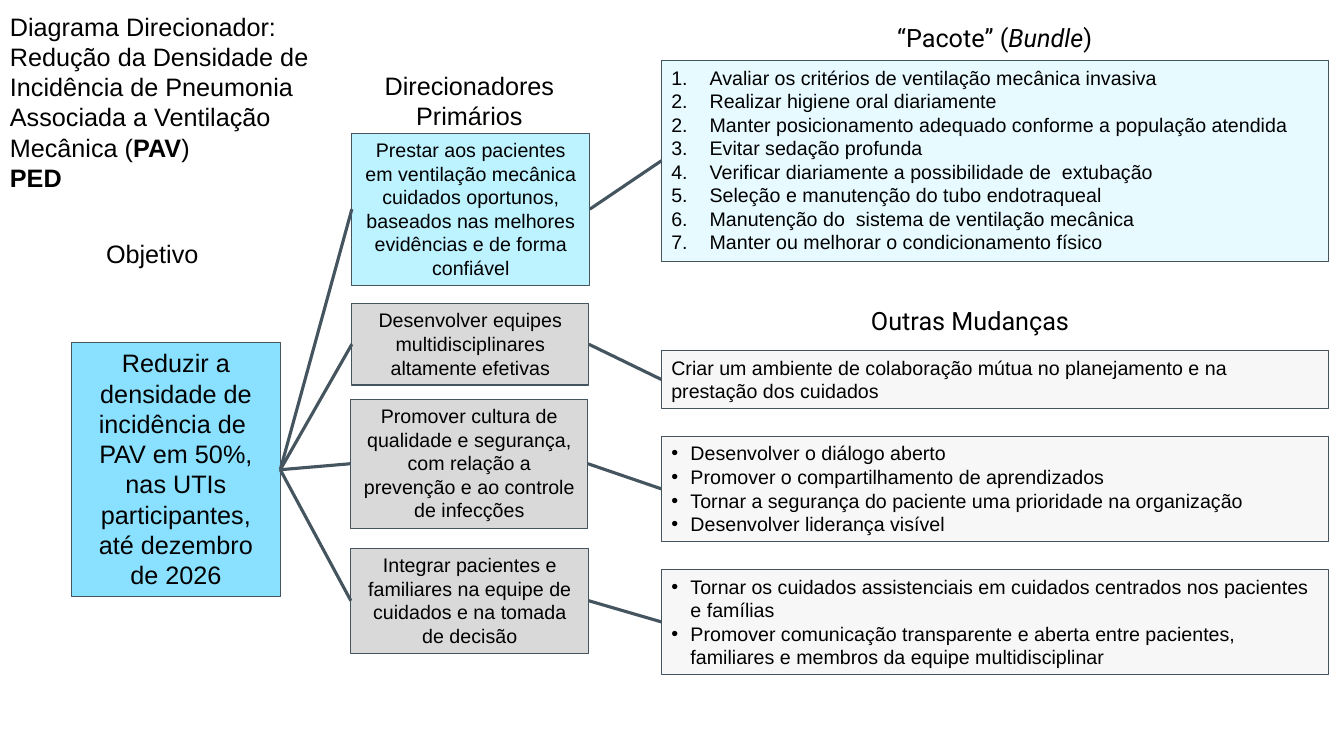
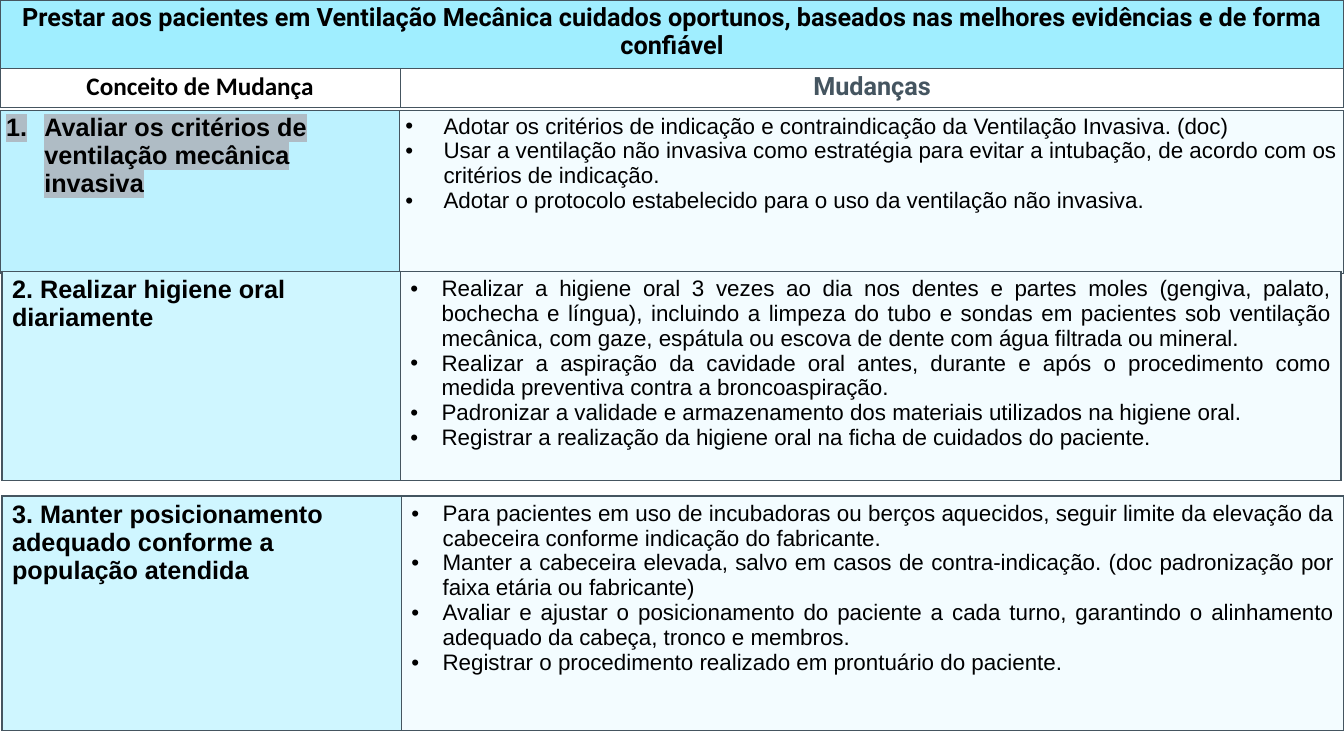
from lxml import etree
from pptx import Presentation
from pptx import util as u
from pptx.dml.color import RGBColor
from pptx.enum import shapes, text
from pptx.oxml import ns

HUES = {
    "ink": "000000", "line": "455560", "white": "FFFFFF", "goal": "89E0FF",
    "main": "BDF2FF", "pack": "E7FAFF", "gray": "D9D9D9", "pale": "F7F7F7",
    "head": "A0EEFF", "idea": "CFF6FF", "cell": "F3FCFF", "mark": "AFBCC5",
}
ALIGN = {"l": text.PP_ALIGN.LEFT, "c": text.PP_ALIGN.CENTER, "j": text.PP_ALIGN.JUSTIFY}

# Slide 1: text, box (left, top, width, height), format
LABELS = [
    (["Diagrama Direcionador:",
      [("Redução da Densidade de Incidência de Pneumonia Associada a Ventilação Mecânica (", {}),
       ("PAV", {"bold": True}), (")", {})],
      [("PED", {"bold": True})]], (0, 0.06, 3.49, 1.92), {}),
    (["Objetivo"], (0.57, 2.32, 1.88, 0.4), {"align": "c"}),
    (["Direcionadores Primários"], (3.4, 0.65, 2.51, 0.71), {"align": "c"}),
    ([[("“Pacote” (", {}), ("Bundle", {"italic": True}), (")", {})]],
     (7.84, 0.17, 4.05, 0.4), {"align": "c", "font": "Roboto"}),
    (["Outras Mudanças"], (8.54, 2.98, 2.35, 0.4), {"font": "Roboto"}),
]
GOAL = ("Reduzir a densidade de incidência de  PAV em 50%, nas UTIs participantes, "
        "até dezembro de 2026")
PACK = [
    "Avaliar os critérios de ventilação mecânica invasiva",
    "Realizar higiene oral diariamente",
    "Manter posicionamento adequado conforme a população atendida",
    "Evitar sedação profunda",
    "Verificar diariamente a possibilidade de  extubação",
    "Seleção e manutenção do tubo endotraqueal",
    "Manutenção do  sistema de ventilação mecânica",
    "Manter ou melhorar o condicionamento físico",
]
STARTS = [1, 1, 2, 3, 3, 5, 5, 5]
# Each driver with its changes: text, box, fill; then texts, (top, height), fill, format
DRIVERS = [
    ("Prestar aos pacientes em ventilação mecânica cuidados oportunos, baseados nas "
     "melhores evidências e de forma confiável", (3.49, 1.32, 2.36, 1.51), "main",
     PACK, (0.6, 1.99), "pack", {"starts": STARTS, "indent": 0.38}),
    ("Desenvolver equipes multidisciplinares altamente efetivas",
     (3.49, 3.01, 2.35, 0.81), "gray",
     ["Criar um ambiente de colaboração mútua no planejamento e na prestação dos cuidados"],
     (3.48, 0.57), "pale", {}),
    ("Promover cultura de qualidade e segurança, com relação a prevenção e ao controle "
     "de infecções", (3.48, 3.96, 2.35, 1.28), "gray",
     ["Desenvolver o diálogo aberto",
      "Promover o compartilhamento de aprendizados",
      "Tornar a segurança do paciente uma prioridade na organização",
      "Desenvolver liderança visível"],
     (4.33, 1.04), "pale", {"indent": 0.19}),
    ("Integrar pacientes e familiares na equipe de cuidados e na tomada de decisão",
     (3.48, 5.44, 2.36, 1.04), "gray",
     ["Tornar os cuidados assistenciais em cuidados centrados nos pacientes e famílias",
      "Promover comunicação transparente e aberta entre pacientes, familiares e membros "
      "da equipe multidisciplinar"],
     (5.65, 1.04), "pale", {"indent": 0.19}),
]

# Slide 2
TITLE = ("Prestar aos pacientes em Ventilação Mecânica cuidados oportunos, baseados nas "
         "melhores evidências e de forma confiável")
# Idea, its changes, (left, top), column widths, height, line width, fill, formats
ROWS = [
    ("Avaliar os critérios de ventilação mecânica invasiva",
     ["Adotar os critérios de indicação e contraindicação da Ventilação Invasiva. (doc)",
      "Usar a ventilação não invasiva como estratégia para evitar a intubação, de acordo "
      "com os critérios de indicação.",
      "Adotar o protocolo estabelecido para o uso da ventilação não invasiva."],
     (0, 1.1), (3.96, 9.36), 1.61, 0.75, "main",
     {"starts": [1], "indent": 0.38, "mark": "mark"}, {"indent": 0.38, "mark": "cell"},
     (0.06, 0.03)),
    ("2. Realizar higiene oral diariamente",
     ["Realizar a higiene oral 3 vezes ao dia nos dentes e partes moles (gengiva, palato, "
      "bochecha e língua), incluindo a limpeza do tubo e sondas em pacientes sob ventilação "
      "mecânica, com gaze, espátula ou escova de dente com água filtrada ou mineral.",
      "Realizar a aspiração da cavidade oral antes, durante e após o procedimento como "
      "medida preventiva contra a broncoaspiração.",
      "Padronizar a validade e armazenamento dos materiais utilizados na higiene oral.",
      "Registrar a realização da higiene oral na ficha de cuidados do paciente."],
     (0.02, 2.69), (3.95, 9.33), 2.08, 1, "idea", {}, {"indent": 0.31}, (0.1, 0.05)),
    ("3. Manter posicionamento adequado conforme a população atendida",
     ["Para pacientes em uso de incubadoras ou berços aquecidos, seguir limite da elevação "
      "da cabeceira conforme indicação do fabricante.",
      "Manter a cabeceira elevada, salvo em casos de contra-indicação. (doc padronização "
      "por faixa etária ou fabricante)",
      "Avaliar e ajustar o posicionamento do paciente a cada turno, garantindo o "
      "alinhamento adequado da cabeça, tronco e membros.",
      "Registrar o procedimento realizado em prontuário do paciente."],
     (0.02, 4.92), (3.96, 9.35), 2.33, 1, "idea", {}, {"indent": 0.31}, (0.1, 0.05)),
]


def rgb(name):
    return RGBColor.from_string(HUES[name])


def add(node, tag, **attrs):
    kid = etree.SubElement(node, ns.qn(tag))
    for key, val in attrs.items():
        kid.set(key, str(val))
    return kid


def bullet(para, indent, start):
    """Hang the paragraph on a number, or on a dot if start is None."""
    props = para._p.get_or_add_pPr()
    props.set("marL", str(u.Inches(indent)))
    props.set("indent", str(-u.Inches(indent)))
    add(props, "a:buFont", typeface="Arial")
    if start is None:
        add(props, "a:buChar", char="•")
    else:
        add(props, "a:buAutoNum", type="arabicPeriod", startAt=start)


def write(frame, paras, size=18, font="Arial", hue="ink", bold=False, align="l",
          lead=1.2, indent=0, starts=None, mark=None):
    """Fill a text frame; a paragraph is a string or a list of (text, format) runs."""
    frame.word_wrap = True
    for i, item in enumerate(paras):
        para = frame.paragraphs[0] if i == 0 else frame.add_paragraph()
        para.alignment = ALIGN[align]
        para.line_spacing = u.Pt(size * lead)
        if indent:
            bullet(para, indent, starts[i] if starts else None)
        for words, style in [(item, {})] if isinstance(item, str) else item:
            run = para.add_run()
            run.text = words
            run.font.size, run.font.name = u.Pt(size), font
            run.font.bold = style.get("bold", bold)
            run.font.italic = style.get("italic", False)
            run.font.color.rgb = rgb(hue)
            if mark:
                glow = etree.Element(ns.qn("a:highlight"))
                add(glow, "a:srgbClr", val=HUES[mark])
                run.font._element.find(ns.qn("a:solidFill")).addnext(glow)


def label(slide, paras, box, **fmt):
    write(slide.shapes.add_textbox(*map(u.Inches, box)).text_frame, paras, **fmt)


def block(slide, paras, box, fill, **fmt):
    shape = slide.shapes.add_shape(shapes.MSO_SHAPE.RECTANGLE, *map(u.Inches, box))
    shape.shadow.inherit = False
    shape.fill.solid()
    shape.fill.fore_color.rgb = rgb(fill)
    shape.line.color.rgb = rgb("line")
    shape.line.width = u.Pt(0.75)
    shape.text_frame.vertical_anchor = text.MSO_ANCHOR.TOP
    write(shape.text_frame, paras, **fmt)
    return shape


def link(slide, start, end):
    """Join the right side of one block to the left side of the next."""
    line = slide.shapes.add_connector(shapes.MSO_CONNECTOR.STRAIGHT, 0, 0, 0, 0)
    line.begin_connect(start, 3)
    line.end_connect(end, 1)
    line.line.color.rgb = rgb("line")
    line.line.width = u.Pt(2.25)
    add(line._element.spPr, "a:effectLst")


def grid(slide, spot, cols, rows):
    left, top = spot
    table = slide.shapes.add_table(
        len(rows), len(cols), *map(u.Inches, (left, top, sum(cols), sum(rows)))).table
    table.first_row = table.horz_banding = False
    for col, wide in zip(table.columns, cols):
        col.width = u.Inches(wide)
    for row, high in zip(table.rows, rows):
        row.height = u.Inches(high)
    return table


def fill_cell(cell, paras, fill, width=1, pad=(0.1, 0.05), middle=False, **fmt):
    cell.margin_left = cell.margin_right = u.Inches(pad[0])
    cell.margin_top = cell.margin_bottom = u.Inches(pad[1])
    cell.vertical_anchor = text.MSO_ANCHOR.MIDDLE if middle else text.MSO_ANCHOR.TOP
    edge(cell, width)
    cell.fill.solid()
    cell.fill.fore_color.rgb = rgb(fill)
    write(cell.text_frame, paras, lead=1.11, **fmt)


def edge(cell, width):
    props = cell._tc.get_or_add_tcPr()
    for side in "LRTB":
        line = add(props, "a:ln" + side, w=u.Pt(width))
        add(add(line, "a:solidFill"), "a:srgbClr", val=HUES["line"])


def diagram(slide):
    for paras, box, fmt in LABELS:
        label(slide, paras, box, **fmt)
    goal = block(slide, [GOAL], (0.71, 3.4, 2.07, 2.52), "goal", align="c")
    for words, box, fill, paras, (top, high), tint, fmt in DRIVERS:
        driver = block(slide, [words], box, fill, size=14, align="c")
        change = block(slide, paras, (6.56, top, 6.62, high), tint, size=14, **fmt)
        link(slide, goal, driver)
        link(slide, driver, change)


def changes(slide):
    head = grid(slide, (0, 0), (3.97, 9.36), (0.68, 0.39))
    head.cell(0, 0).merge(head.cell(0, 1))
    edge(head.cell(0, 1), 1)
    bold = {"bold": True, "align": "c"}
    fill_cell(head.cell(0, 0), [TITLE], "head", font="Roboto", **bold)
    fill_cell(head.cell(1, 0), ["Conceito de Mudança"], "white", pad=(0.01, 0.01),
              middle=True, font="Calibri", **bold)
    fill_cell(head.cell(1, 1), ["Mudanças"], "white", middle=True, font="Roboto",
              hue="line", **bold)
    for idea, items, spot, cols, high, width, fill, left, right, pad in ROWS:
        table = grid(slide, spot, cols, [high])
        fill_cell(table.cell(0, 0), [idea], fill, width, pad, bold=True, **left)
        fill_cell(table.cell(0, 1), items, "cell", width, pad, size=16, align="j", **right)


def main():
    deck = Presentation()
    deck.slide_width, deck.slide_height = u.Inches(13.33), u.Inches(7.5)
    for draw in (diagram, changes):
        draw(deck.slides.add_slide(deck.slide_layouts[6]))
    deck.save("out.pptx")


if __name__ == "__main__":
    main()
